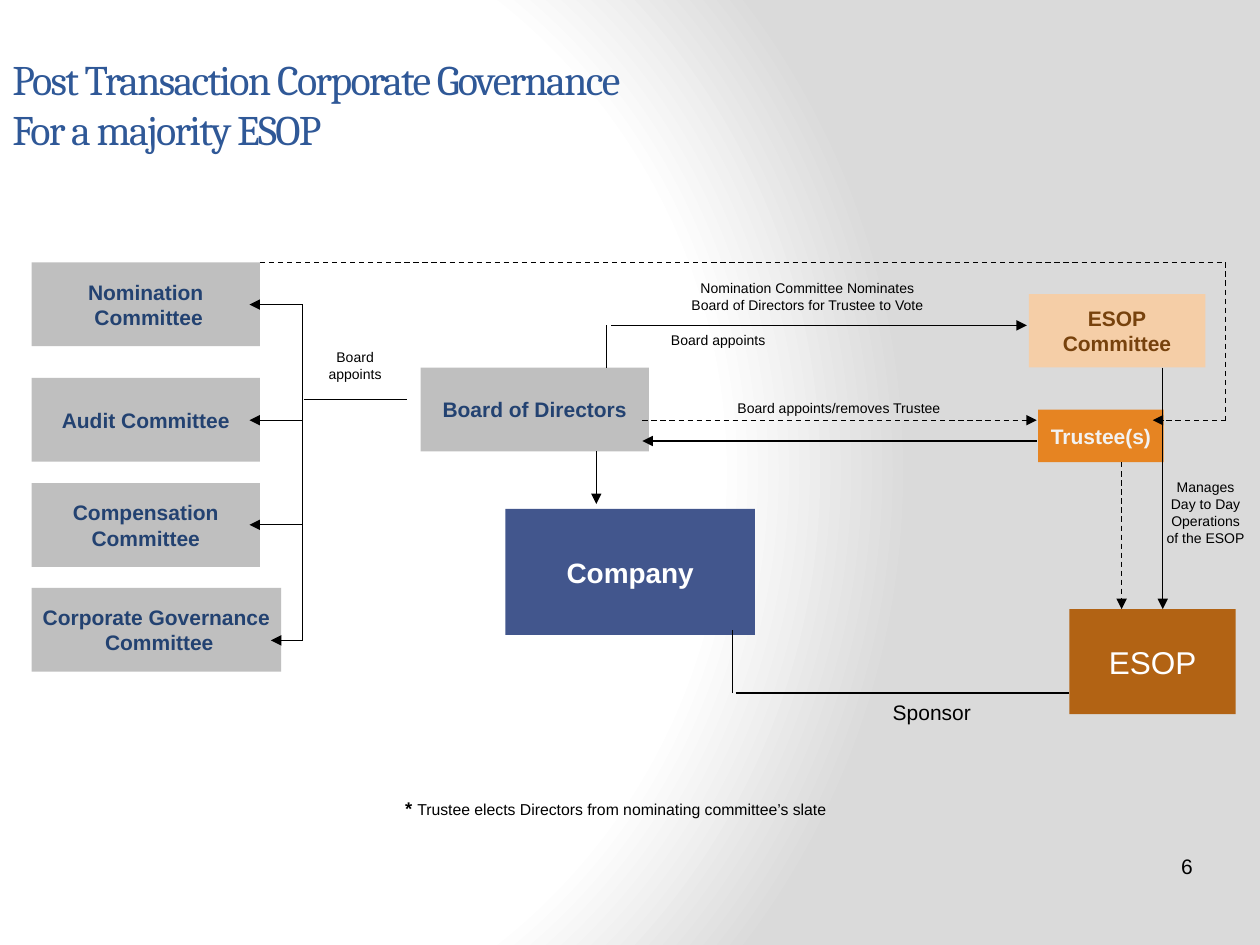
from dataclasses import dataclass

import pptx
import pptx.dml.color
import pptx.enum.dml
import pptx.enum.shapes
import pptx.enum.text
import pptx.oxml
import pptx.oxml.ns
import pptx.util

Cm = pptx.util.Cm
SHAPE = pptx.enum.shapes.MSO_SHAPE
ALIGN = pptx.enum.text.PP_ALIGN
ANCHOR = pptx.enum.text.MSO_ANCHOR
qn = pptx.oxml.ns.qn


@dataclass(frozen=True)
class Theme:
    font: str = "Arial"
    title_font: str = "Cambria"
    title: str = "2F5897"
    ink: str = "000000"
    white: str = "FFFFFF"
    shade: str = "DADADA"
    grey: str = "BFBFBF"
    navy: str = "234271"
    blue: str = "42568D"
    peach: str = "F5CEA7"
    brown: str = "77420D"
    orange: str = "E68422"
    pale: str = "F2F2F2"
    rust: str = "B26314"
    title_size: float = 24
    esop_size: float = 18
    company_size: float = 16
    body_size: float = 12
    star_size: float = 10.5
    note_size: float = 9
    label_size: float = 8
    line_width: float = 0.75


T = Theme()


@dataclass(frozen=True)
class Box:
    text: str
    x: float
    y: float
    w: float
    h: float
    fill: str = T.grey
    color: str = T.navy
    size: float = T.body_size
    bold: bool = True


@dataclass(frozen=True)
class Link:
    x1: float
    y1: float
    x2: float
    y2: float
    arrow: bool = False
    dashed: bool = False


@dataclass(frozen=True)
class Label:
    text: str
    x: float
    y: float
    w: float
    h: float
    size: float = T.label_size


def add_run(p, text: str, size: float, color: str = T.ink, bold: bool = False, font: str = T.font):
    r = p.add_run()
    r.text = text
    r.font.name, r.font.size, r.font.bold = font, pptx.util.Pt(size), bold
    r.font.color.rgb = pptx.dml.color.RGBColor.from_string(color)
    return r


def text_frame(s, x: float, y: float, w: float, h: float):
    tf = s.shapes.add_textbox(Cm(x), Cm(y), Cm(w), Cm(h)).text_frame
    tf.word_wrap = True
    return tf


def draw_box(s, b: Box) -> None:
    sp = s.shapes.add_shape(SHAPE.RECTANGLE, Cm(b.x), Cm(b.y), Cm(b.w), Cm(b.h))
    sp.shadow.inherit = False
    sp.fill.solid()
    sp.fill.fore_color.rgb = pptx.dml.color.RGBColor.from_string(b.fill)
    sp.line.fill.background()
    tf = sp.text_frame
    tf.word_wrap = False
    tf.vertical_anchor = ANCHOR.MIDDLE
    for i, line in enumerate(b.text.split("\n")):
        p = tf.add_paragraph() if i else tf.paragraphs[0]
        p.alignment = ALIGN.CENTER
        add_run(p, line, b.size, b.color, b.bold)


def draw_link(s, k: Link) -> None:
    c = s.shapes.add_connector(pptx.enum.shapes.MSO_CONNECTOR.STRAIGHT,
                               Cm(k.x1), Cm(k.y1), Cm(k.x2), Cm(k.y2))
    c.line.width = pptx.util.Pt(T.line_width)
    c.line.color.rgb = pptx.dml.color.RGBColor.from_string(T.ink)
    if k.dashed:
        c.line.dash_style = pptx.enum.dml.MSO_LINE.DASH
    sp_pr = c.element.spPr
    if k.arrow:
        tail = pptx.oxml.parse_xml(f'<a:tailEnd {pptx.oxml.ns.nsdecls("a")} type="triangle"/>')
        sp_pr.find(qn("a:ln")).append(tail)
    sp_pr.append(pptx.oxml.parse_xml(f'<a:effectLst {pptx.oxml.ns.nsdecls("a")}/>'))


def draw_label(s, t: Label) -> None:
    p = text_frame(s, t.x, t.y, t.w, t.h).paragraphs[0]
    p.alignment = ALIGN.CENTER
    add_run(p, t.text, t.size)


def draw_background(s) -> None:
    stops = "".join(f'<a:gs pos="{pos * 1000}"><a:srgbClr val="{color}"/></a:gs>'
                    for pos, color in ((0, T.white), (75, T.white), (100, T.shade)))
    bg = pptx.oxml.parse_xml(
        f'<p:bg {pptx.oxml.ns.nsdecls("p", "a")}><p:bgPr><a:gradFill rotWithShape="1">'
        f'<a:gsLst>{stops}</a:gsLst><a:path path="circle">'
        '<a:fillToRect l="20000" t="50000" r="100000" b="50000"/></a:path>'
        '</a:gradFill><a:effectLst/></p:bgPr></p:bg>')
    s.element.cSld.insert(0, bg)


# Committees on the left, with the height of the arrow into each
COMMITTEES = [
    (Box("Nomination\n Committee", 0.64, 5.29, 4.6, 1.69), 6.14),
    (Box("Audit Committee", 0.64, 7.62, 4.6, 1.69), 8.47),
    (Box("Compensation\nCommittee", 0.64, 9.74, 4.6, 1.69), 10.58),
    (Box("Corporate Governance\n Committee", 0.64, 11.85, 5.03, 1.69), 12.91),
]
SPINE_X, ARROW_INSET = 6.1, 0.21

BOXES = [
    Box("Company", 10.19, 10.26, 5.03, 2.54, T.blue, T.white, T.company_size),
    Box("ESOP", 21.56, 12.28, 3.35, 2.12, T.rust, T.white, T.esop_size, False),
    Box("Board of Directors", 8.48, 7.41, 4.6, 1.69),
    Box("Trustee(s)", 20.93, 8.26, 2.53, 1.06, T.orange, T.pale),
    Box("ESOP\nCommittee", 20.74, 5.93, 3.56, 1.48, T.peach, T.brown),
]

LINKS = [
    # Board to committees, company and ESOP committee
    Link(SPINE_X, COMMITTEES[0][1], SPINE_X, COMMITTEES[-1][1]),
    Link(6.12, 8.05, 8.2, 8.05),
    Link(12.02, 9.1, 12.02, 10.16, arrow=True),
    Link(12.22, 7.41, 12.22, 6.56),
    Link(12.32, 6.56, 20.7, 6.56, arrow=True),
    # Board and trustee
    Link(12.95, 8.47, 20.9, 8.47, arrow=True, dashed=True),
    Link(20.9, 8.89, 12.95, 8.89, arrow=True),
    # Nomination committee to trustee
    Link(5.24, 5.29, 24.71, 5.29, dashed=True),
    Link(24.71, 5.29, 24.71, 8.47, dashed=True),
    Link(24.71, 8.47, 23.24, 8.47, arrow=True, dashed=True),
    # Into the ESOP
    Link(22.61, 9.32, 22.61, 12.28, arrow=True, dashed=True),
    Link(23.44, 7.41, 23.44, 12.28, arrow=True),
    Link(14.76, 13.97, 14.76, 12.7),
    Link(14.83, 13.97, 21.54, 13.97),
]

LABELS = [
    Label("Board appoints", 6.32, 6.91, 1.68, 0.94),
    Label("Board appoints", 12.7, 6.56, 3.56, 0.58),
    Label("Board appoints/removes Trustee", 14.4, 7.92, 5.03, 0.58),
    Label("Nomination Committee Nominates Board of Directors for Trustee to Vote",
          13.56, 5.51, 5.44, 0.94),
    Label("Manages Day to Day Operations of the ESOP", 23.23, 9.53, 2.15, 1.63),
    Label("Sponsor", 17.35, 13.97, 2.87, 0.76, T.body_size),
]


def main() -> None:
    prs = pptx.Presentation()
    prs.slide_width, prs.slide_height = Cm(25.4), Cm(19.05)
    s = prs.slides.add_slide(prs.slide_layouts[6])
    draw_background(s)

    # Title
    tf = text_frame(s, 0, 0.51, 22.86, 3.17)
    tf.vertical_anchor = ANCHOR.MIDDLE
    p = tf.paragraphs[0]
    for i, line in enumerate(("Post Transaction Corporate Governance", "For a majority ESOP")):
        if i:
            p.add_line_break()
        r = add_run(p, line, T.title_size, T.title, font=T.title_font)
        r.font._element.set("spc", "-100")

    # Diagram
    for b in BOXES:
        draw_box(s, b)
    for b, y in COMMITTEES:
        draw_box(s, b)
        draw_link(s, Link(SPINE_X, y, b.x + b.w - ARROW_INSET, y, arrow=True))
    for k in LINKS:
        draw_link(s, k)
    for t in LABELS:
        draw_label(s, t)

    # Footnote and slide number
    p = text_frame(s, 0.69, 15.95, 23.44, 1.09).paragraphs[0]
    p.alignment = ALIGN.CENTER
    add_run(p, "* ", T.star_size, bold=True)
    add_run(p, "Trustee elects Directors from nominating committee’s slate", T.note_size)
    add_run(text_frame(s, 23.56, 17.09, 1.52, 1.09).paragraphs[0], "6", T.body_size)

    prs.save("out.pptx")


if __name__ == "__main__":
    main()
